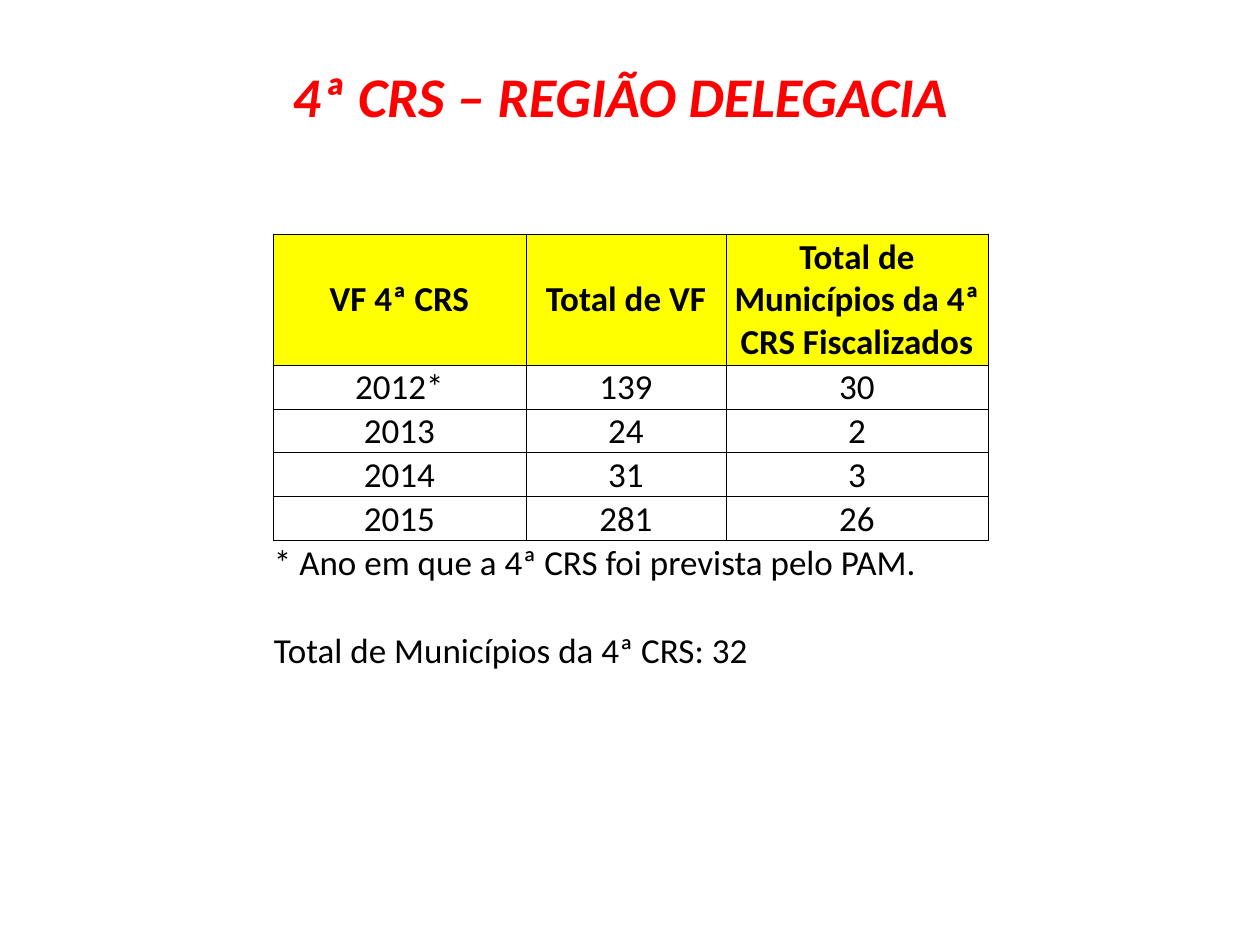
from lxml import etree
from pptx import Presentation
from pptx import util as u
from pptx.dml.color import RGBColor
from pptx.enum import text
from pptx.oxml.ns import qn

PX = 914400 // 126
FONT = "Calibri"
BLACK, RED, YELLOW = "000000", "FF0000", "FFFF00"
NO_STYLE = "{2D5ABB26-0587-4C30-8999-92F81FD0307C}"

TITLE = "4ª CRS – REGIÃO DELEGACIA"
TITLE_BOX = (25, 55, 1191, 81)
HEADER = ("VF 4ª CRS", "Total de VF", "Total de Municípios da 4ª CRS Fiscalizados")
YEARS = [
    ("2012*", "139", "30"),
    ("2013", "24", "2"),
    ("2014", "31", "3"),
    ("2015", "281", "26"),
]
NOTES = [
    "* Ano em que a 4ª CRS foi prevista pelo PAM.",
    "",
    "Total de Municípios da 4ª CRS: 32",
]
TABLE_LEFT, TABLE_TOP = 273, 234
COLUMN_WIDTHS = (253, 200, 262)
HEADER_HEIGHT, ROW_HEIGHT = 131, 44


def px(*values):
    return [u.Emu(value * PX) for value in values]


def rgb(color):
    return RGBColor.from_string(color)


def format_paragraph(paragraph, size, color, align, bold=False, italic=False):
    paragraph.alignment = align
    for run in paragraph.runs:
        font = run.font
        font.name, font.size, font.bold, font.italic = FONT, u.Pt(size), bold, italic
        font.color.rgb = rgb(color)


def add_borders(cell):
    properties = cell._tc.get_or_add_tcPr()
    for side in ("lnL", "lnR", "lnT", "lnB"):
        line = etree.SubElement(properties, qn(f"a:{side}"), w=str(u.Pt(0.5)))
        fill = etree.SubElement(line, qn("a:solidFill"))
        etree.SubElement(fill, qn("a:srgbClr"), val=BLACK)


def fill_cell(cell, content, anchor, align, bold=False, fill=None):
    cell.margin_left = cell.margin_right = cell.margin_top = PX
    cell.margin_bottom = 0
    cell.vertical_anchor = anchor
    cell.text_frame.text = content
    paragraph = cell.text_frame.paragraphs[0]
    format_paragraph(paragraph, 20, BLACK, align, bold)
    if not content:  # keeps an empty row from growing
        etree.SubElement(paragraph._p, qn("a:endParaRPr"), sz="2000")
    if fill:
        cell.fill.solid()
        cell.fill.fore_color.rgb = rgb(fill)
    else:
        cell.fill.background()


def add_title(slide):
    title = slide.shapes.title
    title.left, title.top, title.width, title.height = px(*TITLE_BOX)
    title.text_frame.text = TITLE
    format_paragraph(title.text_frame.paragraphs[0], 32, RED,
                     text.PP_ALIGN.CENTER, bold=True, italic=True)


def add_visit_table(slide):
    grid = [HEADER, *YEARS]
    heights = [HEADER_HEIGHT] + [ROW_HEIGHT] * (len(YEARS) + len(NOTES))
    frame = slide.shapes.add_table(
        len(heights), len(HEADER),
        *px(TABLE_LEFT, TABLE_TOP, sum(COLUMN_WIDTHS), sum(heights)))
    table = frame.table
    table.first_row = table.horz_banding = False
    table._tbl.tblPr.find(qn("a:tableStyleId")).text = NO_STYLE
    for column, width in zip(table.columns, px(*COLUMN_WIDTHS)):
        column.width = width
    for row, height in zip(table.rows, px(*heights)):
        row.height = height

    for r, values in enumerate(grid):
        is_header = r == 0
        anchor = text.MSO_ANCHOR.MIDDLE if is_header else text.MSO_ANCHOR.BOTTOM
        for c, value in enumerate(values):
            cell = table.cell(r, c)
            add_borders(cell)
            fill_cell(cell, value, anchor, text.PP_ALIGN.CENTER,
                      bold=is_header, fill=YELLOW if is_header else None)

    last = len(HEADER) - 1
    for r, note in enumerate(NOTES, start=len(grid)):
        for c in range(len(HEADER)):
            fill_cell(table.cell(r, c), note if c == 0 else "",
                      text.MSO_ANCHOR.BOTTOM, text.PP_ALIGN.LEFT)
        if note:
            table.cell(r, 0).merge(table.cell(r, last))


def main():
    presentation = Presentation()
    presentation.slide_width, presentation.slide_height = u.Inches(10), u.Inches(7.5)
    slide = presentation.slides.add_slide(presentation.slide_layouts[5])
    add_title(slide)
    add_visit_table(slide)
    presentation.save("out.pptx")


if __name__ == "__main__":
    main()
